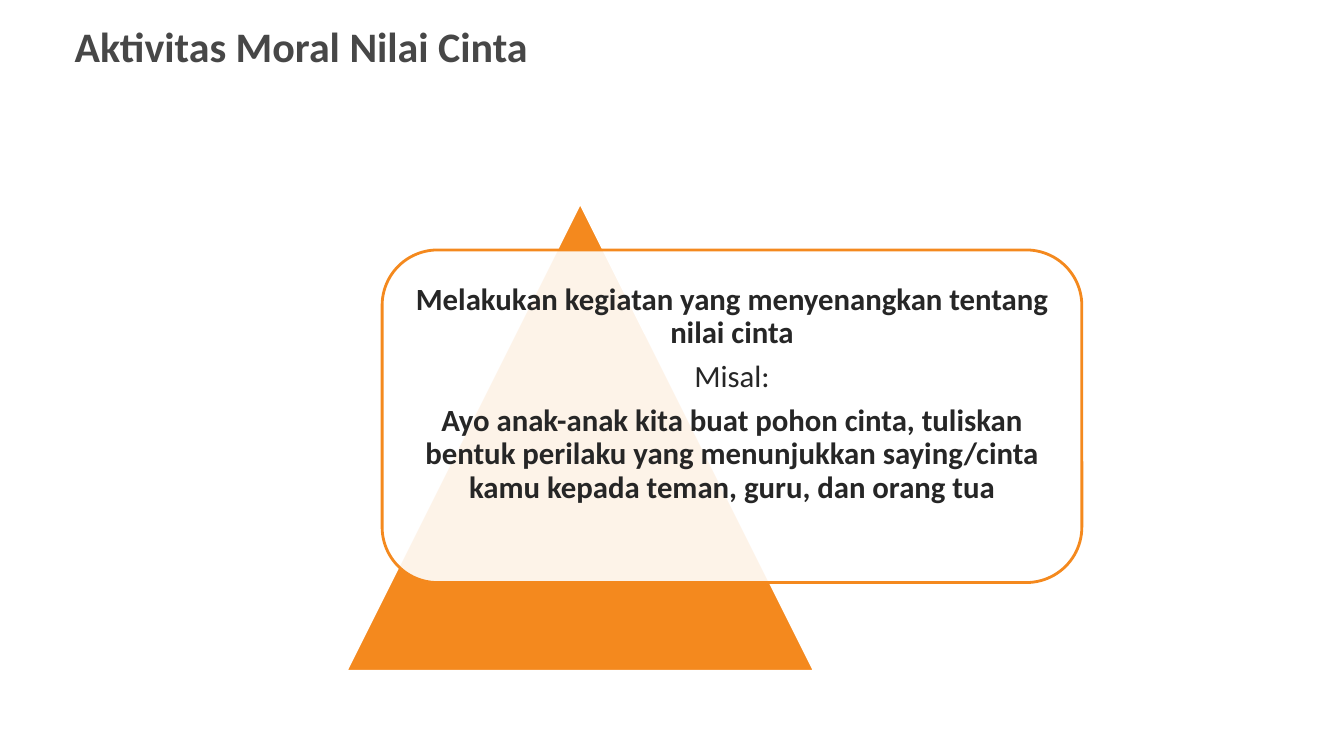
from lxml import etree
from pptx import Presentation
from pptx.dml.color import RGBColor
from pptx.enum.shapes import MSO_SHAPE as Shape
from pptx.enum.text import MSO_ANCHOR as Anchor, PP_ALIGN as Align
from pptx.oxml.ns import qn
from pptx.util import Pt

PX = 9144  # EMU, 100 px to the inch
FONT = "Calibri"
WHITE = RGBColor(0xFF, 0xFF, 0xFF)
ORANGE = RGBColor(0xF4, 0x89, 0x1E)
TITLE_GREY = RGBColor(0x47, 0x47, 0x47)
BODY_GREY = RGBColor(0x26, 0x26, 0x26)

ACTIVITY = [
    ("Melakukan kegiatan yang menyenangkan tentang nilai cinta", True),
    ("Misal:", False),
    ("Ayo anak-anak kita buat pohon cinta, tuliskan bentuk perilaku yang "
     "menunjukkan saying/cinta kamu kepada teman, guru, dan orang tua", True),
]


def px(*lengths):
    return [length * PX for length in lengths]


def add_run(paragraph, text, size, color, bold):
    run = paragraph.add_run()
    run.text = text
    run.font.name = FONT
    run.font.size = Pt(size)
    run.font.bold = bold
    run.font.color.rgb = color


def set_title(slide, text):
    title = slide.shapes.title
    title.left, title.top, title.width, title.height = px(64, 8, 1225, 75)
    title.text_frame.vertical_anchor = Anchor.MIDDLE
    heading = title.text_frame.paragraphs[0]
    heading.alignment = Align.LEFT
    add_run(heading, text, 30, TITLE_GREY, True)


def add_outlined(slide, preset, box, fill, line, opacity=100):
    """Add a preset shape with a 2 pt outline; opacity is in percent."""
    shape = slide.shapes.add_shape(preset, *px(*box))
    shape.shadow.inherit = False
    shape.fill.solid()
    shape.fill.fore_color.rgb = fill
    shape.line.color.rgb = line
    shape.line.width = Pt(2)
    if opacity < 100:
        color = shape.fill._xPr.find(qn("a:solidFill"))[0]
        etree.SubElement(color, qn("a:alpha")).set("val", str(opacity * 1000))


def add_centred_text(slide, box, lines):
    frame = slide.shapes.add_textbox(*px(*box)).text_frame
    frame.word_wrap = True
    frame.vertical_anchor = Anchor.MIDDLE
    frame.margin_left = frame.margin_right = 9 * PX
    frame.margin_top = frame.margin_bottom = 9 * PX
    for index, (text, bold) in enumerate(lines):
        paragraph = frame.add_paragraph() if index else frame.paragraphs[0]
        paragraph.alignment = Align.CENTER
        paragraph.line_spacing = 0.9
        paragraph.space_after = Pt(7.7)
        add_run(paragraph, text, 22, BODY_GREY, bold)


def main():
    deck = Presentation()
    deck.slide_width, deck.slide_height = px(1333, 750)
    slide = deck.slides.add_slide(deck.slide_layouts[5])
    set_title(slide, "Aktivitas Moral Nilai Cinta")
    add_outlined(slide, Shape.ISOSCELES_TRIANGLE, (343, 201, 465, 465), ORANGE, WHITE)
    add_outlined(slide, Shape.ROUNDED_RECTANGLE, (379, 248, 694, 330), WHITE, ORANGE,
                 opacity=90)
    add_centred_text(slide, (395, 264, 662, 254), ACTIVITY)
    deck.save("out.pptx")


if __name__ == "__main__":
    main()
